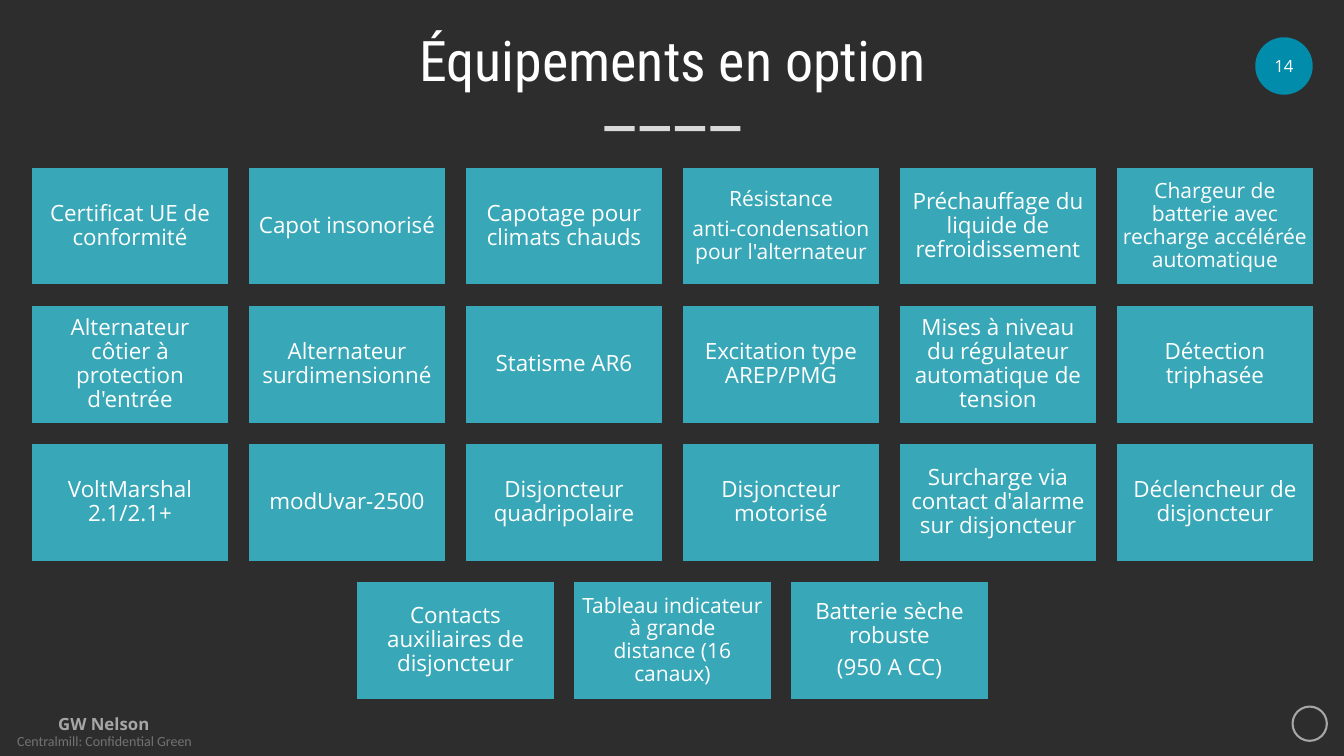
import pptx
import pptx.util
import pptx.dml.color
import pptx.enum.shapes
import pptx.enum.text

Inches = pptx.util.Inches
RGBColor = pptx.dml.color.RGBColor
MSO_SHAPE = pptx.enum.shapes.MSO_SHAPE

BACKGROUND = RGBColor(0x2D, 0x2D, 0x2D)
WHITE = RGBColor(0xFF, 0xFF, 0xFF)
TILE_BLUE = RGBColor(0x38, 0xA7, 0xB7)
BADGE_BLUE = RGBColor(0x00, 0x8C, 0xAA)
DASH_GREY = RGBColor(0xD9, 0xD9, 0xD9)
FOOTER_GREY = RGBColor(0xA6, 0xA6, 0xA6)
NOTICE_GREY = RGBColor(0x73, 0x73, 0x73)

TEXT_FONT = "Open Sans"
TITLE_FONT = "Roboto Condensed"
NOTICE_FONT = "Calibri"

CENTER = pptx.enum.text.PP_ALIGN.CENTER
LEFT = pptx.enum.text.PP_ALIGN.LEFT

# Each option: its text and its font size
OPTION_ROWS = [
    [("Certificat UE de conformité", 16),
     ("Capot insonorisé", 16),
     ("Capotage pour climats chauds", 16),
     ("Résistance\nanti-condensation pour l'alternateur", 15),
     ("Préchauffage du liquide de refroidissement", 16),
     ("Chargeur de batterie avec recharge accélérée automatique", 15)],
    [("Alternateur côtier à protection d'entrée", 16),
     ("Alternateur surdimensionné", 16),
     ("Statisme AR6", 16),
     ("Excitation type AREP/PMG", 16),
     ("Mises à niveau du régulateur automatique de tension", 16),
     ("Détection triphasée", 16)],
    [("VoltMarshal 2.1/2.1+", 16),
     ("modUvar-2500", 16),
     ("Disjoncteur quadripolaire", 16),
     ("Disjoncteur motorisé", 16),
     ("Surcharge via contact d'alarme sur disjoncteur", 16),
     ("Déclencheur de disjoncteur", 16)],
    [("Contacts auxiliaires de disjoncteur", 16),
     ("Tableau indicateur à grande\vdistance (16 canaux)", 15),
     ("Batterie sèche robuste\n(950 A CC)", 16)],
]


def write_text(shape, text, size, color, font=TEXT_FONT, align=CENTER,
               bold=False, inset=0.0, line_spacing=1.0, space_after=0.0):
    """Fill a shape with vertically centred, formatted text."""
    frame = shape.text_frame
    frame.text = text
    frame.word_wrap = True
    frame.auto_size = pptx.enum.text.MSO_AUTO_SIZE.NONE
    frame.vertical_anchor = pptx.enum.text.MSO_ANCHOR.MIDDLE
    frame.margin_left = frame.margin_right = Inches(inset)
    frame.margin_top = frame.margin_bottom = Inches(inset)
    for paragraph in frame.paragraphs:
        paragraph.alignment = align
        paragraph.line_spacing = line_spacing
        paragraph.space_before = pptx.util.Pt(0)
        paragraph.space_after = pptx.util.Pt(space_after)
        for run in paragraph.runs:
            run.font.name = font
            run.font.size = pptx.util.Pt(size)
            run.font.bold = bold
            run.font.color.rgb = color


def add_filled_shape(slide, kind, left, top, width, height, color):
    shape = slide.shapes.add_shape(
        kind, Inches(left), Inches(top), Inches(width), Inches(height))
    shape.shadow.inherit = False
    shape.fill.solid()
    shape.fill.fore_color.rgb = color
    shape.line.fill.background()
    return shape


def add_text_box(slide, left, top, width, height):
    return slide.shapes.add_textbox(
        Inches(left), Inches(top), Inches(width), Inches(height))


def add_header(slide, left, top, width, height):
    # Title
    title = slide.shapes.title
    title.left, title.top = Inches(left), Inches(top)
    title.width, title.height = Inches(width), Inches(height)
    write_text(title, "Équipements en option", 40, WHITE, TITLE_FONT,
               line_spacing=0.9)

    # Row of dashes under the title
    dash_width, dash_pitch, dash_count = 0.3, 0.35, 4
    row_width = dash_width + (dash_count - 1) * dash_pitch
    first_left = left + (width - row_width) / 2
    for index in range(dash_count):
        add_filled_shape(slide, MSO_SHAPE.RECTANGLE,
                         first_left + index * dash_pitch, top + 0.9,
                         dash_width, 0.05, DASH_GREY)


def add_page_badge(slide, left, top, size):
    badge = add_filled_shape(slide, MSO_SHAPE.OVAL, left, top, size, size,
                             BADGE_BLUE)
    write_text(badge, "14", 12, WHITE)


def add_option_grid(slide, left, top, width, height):
    tile_width, tile_height = 1.96, 1.17
    columns = max(len(row) for row in OPTION_ROWS)
    column_pitch = (width - tile_width) / (columns - 1)
    row_pitch = (height - tile_height) / (len(OPTION_ROWS) - 1)
    for row_index, row in enumerate(OPTION_ROWS):
        # A shorter row is centred
        row_left = left + (columns - len(row)) * column_pitch / 2
        for column_index, (text, size) in enumerate(row):
            tile = add_filled_shape(
                slide, MSO_SHAPE.RECTANGLE,
                row_left + column_index * column_pitch,
                top + row_index * row_pitch,
                tile_width, tile_height, TILE_BLUE)
            tile.line.color.rgb = BACKGROUND
            tile.line.width = pptx.util.Pt(1)
            write_text(tile, text, size, WHITE,
                       inset=0.07 if size == 16 else 0.06,
                       line_spacing=0.9, space_after=0.35 * size)


def add_footer(slide, left, top, width, height):
    # Company name and confidentiality notice
    company = add_text_box(slide, left + 0.4, top + 0.03, 1.26, 0.3)
    write_text(company, "GW Nelson", 12, FOOTER_GREY, bold=True)
    notice = add_text_box(slide, left, top + 0.21, 2.06, height - 0.21)
    write_text(notice, "Centralmill: Confidential Green", 10, NOTICE_GREY,
               NOTICE_FONT, LEFT, inset=0)
    notice.text_frame.margin_left = Inches(0.17)

    # Plain ring at the right end
    ring = add_filled_shape(slide, MSO_SHAPE.OVAL, left + width - 0.51,
                            top + 0.01, 0.34, 0.34, FOOTER_GREY)
    ring.fill.background()
    ring.line.color.rgb = FOOTER_GREY
    ring.line.width = pptx.util.Pt(1.5)


def build_options_slide(presentation):
    slide = presentation.slides.add_slide(presentation.slide_layouts[5])
    slide.background.fill.solid()
    slide.background.fill.fore_color.rgb = BACKGROUND
    add_header(slide, 1.17, 0.35, 11, 0.56)
    add_page_badge(slide, 12.45, 0.37, 0.57)
    add_option_grid(slide, 0.31, 1.66, 12.72, 5.28)
    add_footer(slide, 0, 7, 13.33, 0.5)


def main():
    presentation = pptx.Presentation()
    presentation.slide_width = Inches(13.33)
    presentation.slide_height = Inches(7.5)
    build_options_slide(presentation)
    presentation.save("out.pptx")


if __name__ == "__main__":
    main()
